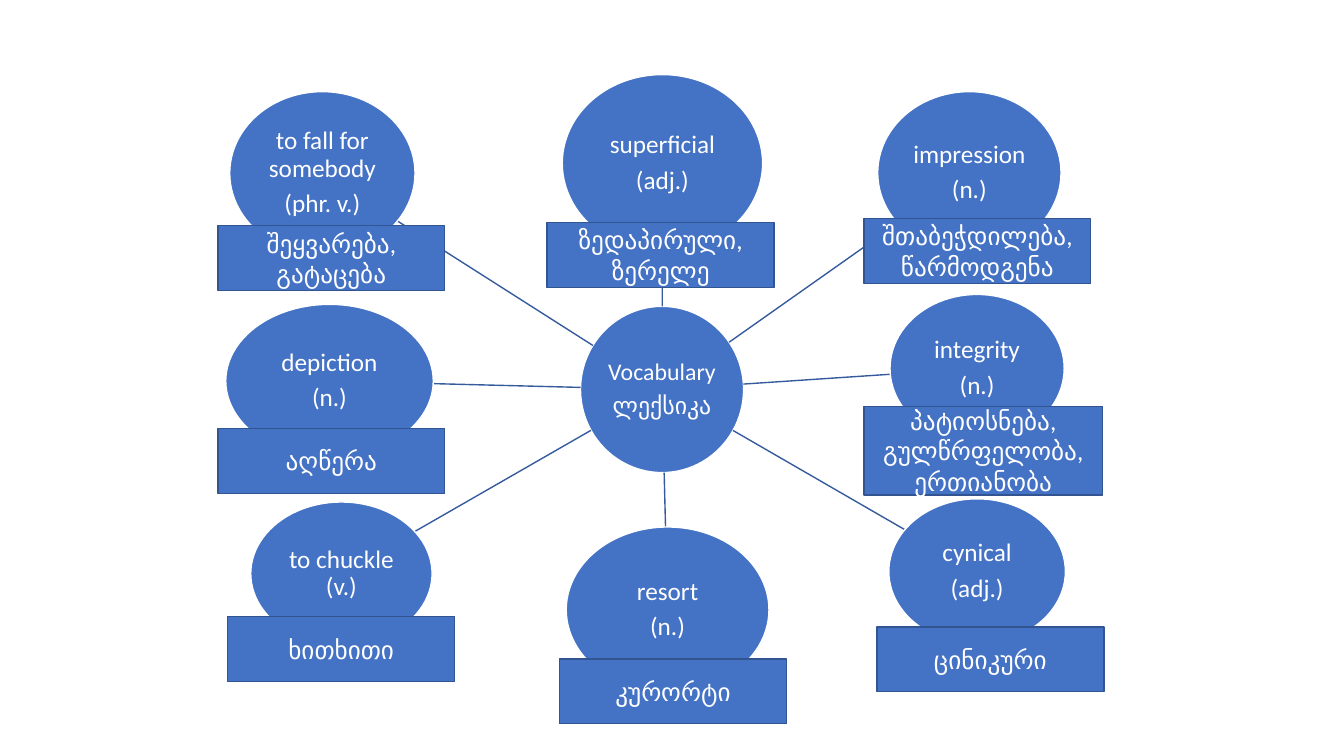
from math import hypot

from lxml import etree
from pptx import Presentation
from pptx import util as u
from pptx.dml.color import RGBColor
from pptx.enum import shapes, text
from pptx.oxml.ns import qn

COLORS = {"fill": "4472C4", "edge": "325491", "spoke": "365B9D", "white": "FFFFFF"}
LABEL = (5.72, 1.63)

# left, top, width, height in cm
HUB = (14.63, 7.72, 4.11, 4.19)

# word lines, bubble box, meaning, label left and top, label size
WORDS = [
    (["superficial", "(adj.)"], (14.17, 1.88, 5.05, 4.47),
     "ზედაპირული, ზერელე", (13.79, 5.61), LABEL),
    (["impression", "(n.)"], (22.12, 2.31, 4.62, 4.09),
     "შთაბეჭდილება, წარმოდგენა", (21.77, 5.51), LABEL),
    (["integrity", "(n.)"], (22.43, 7.42, 4.39, 3.73),
     "პატიოსნება, გულწრფელობა, ერთიანობა", (21.77, 10.24), (6.02, 2.24)),
    (["cynical", "(adj.)"], (22.4, 12.57, 4.45, 3.66),
     "ცინიკური", (22.1, 15.8), LABEL),
    (["resort", "(n.)"], (14.27, 13.28, 5.11, 4.17),
     "კურორტი", (14.1, 16.61), LABEL),
    (["to chuckle (v.)"], (6.32, 12.65, 4.57, 3.61),
     "ხითხითი", (5.74, 15.54), LABEL),
    (["depiction", "(n.)"], (5.69, 7.67, 5.23, 3.86),
     "აღწერა", (5.49, 10.8), LABEL),
    (["to fall for somebody", "(phr. v.)"], (5.79, 2.31, 4.67, 4.11),
     "შეყვარება, გატაცება", (5.49, 5.69), LABEL),
]


def center(box):
    left, top, width, height = box
    return left + width / 2, top + height / 2


def rim(box, goal):
    """Point where the line from the ellipse's centre to goal leaves it."""
    x, y = center(box)
    dx, dy = goal[0] - x, goal[1] - y
    reach = hypot(dx / (box[2] / 2), dy / (box[3] / 2))
    return x + dx / reach, y + dy / reach


class Board:
    font = "Calibri"

    def __init__(self, slide):
        self.slide = slide

    def color(self, name):
        return RGBColor.from_string(COLORS[name])

    def shape(self, kind, box, edge, lines, size):
        item = self.slide.shapes.add_shape(kind, *map(u.Cm, box))
        item.shadow.inherit = False
        item.fill.solid()
        item.fill.fore_color.rgb = self.color("fill")
        item.line.color.rgb = self.color(edge)
        item.line.width = u.Pt(1)
        frame = item.text_frame
        frame.word_wrap = True
        frame.vertical_anchor = text.MSO_ANCHOR.MIDDLE
        for i, line in enumerate(lines):
            para = frame.add_paragraph() if i else frame.paragraphs[0]
            para.text = line
            para.alignment = text.PP_ALIGN.CENTER
            para.font.name = self.font
            para.font.size = u.Pt(size)
            para.font.color.rgb = self.color("white")
        return frame

    def bubble(self, box, lines, size=18):
        frame = self.shape(shapes.MSO_SHAPE.OVAL, box, "white", lines, size)
        frame.margin_left = frame.margin_right = u.Cm(0.03)
        frame.margin_top = frame.margin_bottom = u.Cm(0.03)
        for para in frame.paragraphs:
            para.line_spacing = 0.9
            para.space_after = u.Pt(6)

    def label(self, box, line):
        self.shape(shapes.MSO_SHAPE.RECTANGLE, box, "edge", [line], 18)

    def spoke(self, hub, box):
        ends = rim(hub, center(box)) + rim(box, center(hub))
        line = self.slide.shapes.add_connector(
            shapes.MSO_CONNECTOR.STRAIGHT, *map(u.Cm, ends))
        line.line.color.rgb = self.color("spoke")
        line.line.width = u.Pt(1)
        etree.SubElement(line._element.spPr, qn("a:effectLst"))


def main():
    deck = Presentation()
    deck.slide_width, deck.slide_height = u.Cm(33.87), u.Cm(19.05)
    board = Board(deck.slides.add_slide(deck.slide_layouts[6]))

    board.bubble(HUB, ["Vocabulary", "ლექსიკა"], 17)
    for lines, box, *_ in WORDS:
        board.spoke(HUB, box)
        board.bubble(box, lines)
    for _, _, meaning, spot, size in WORDS:
        board.label(spot + size, meaning)

    deck.save("out.pptx")


if __name__ == "__main__":
    main()
